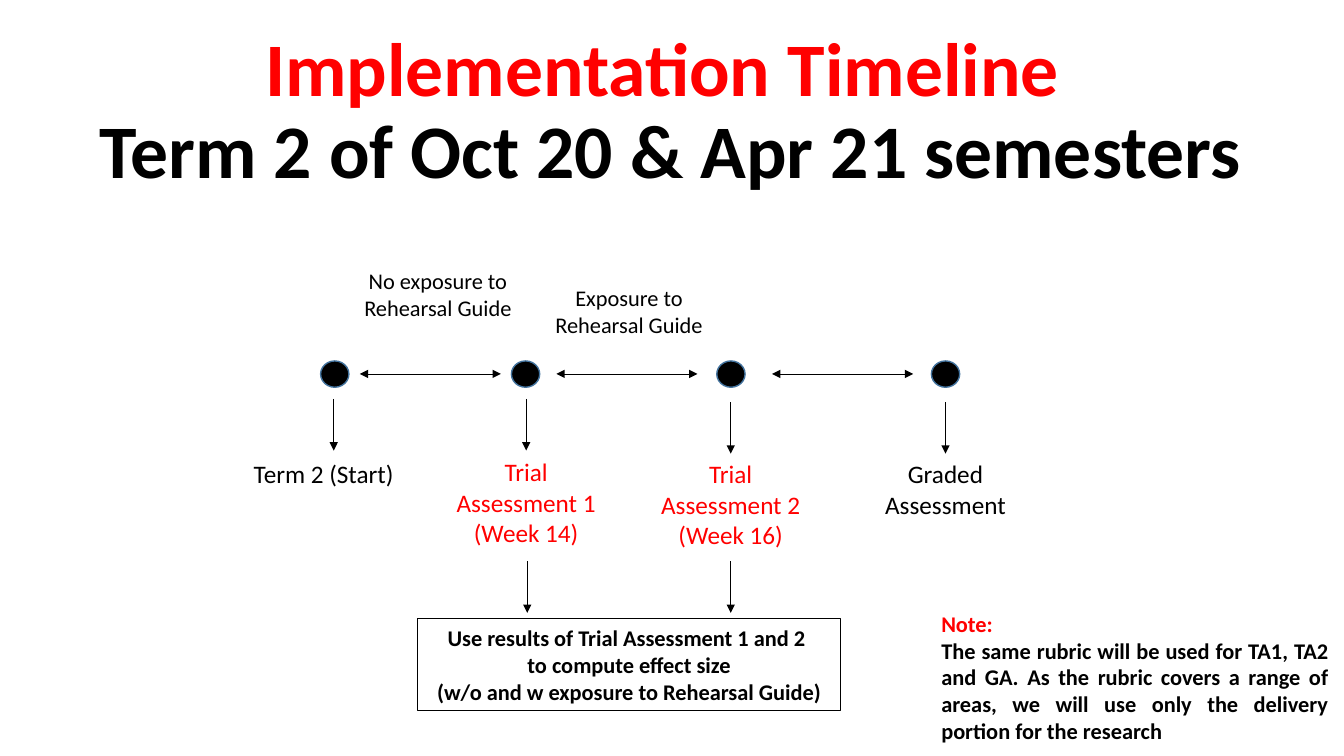
"""Build the implementation timeline slide."""
from dataclasses import dataclass

from lxml import etree
from pptx import Presentation
from pptx.dml.color import RGBColor
from pptx.enum import shapes, text
from pptx.oxml import ns
from pptx.util import Pt

FONT = "Calibri"
BLACK, RED, DOT_EDGE = "000000", "FF0000", "43739E"
CENTER, LEFT, JUSTIFY = text.PP_ALIGN.CENTER, text.PP_ALIGN.LEFT, text.PP_ALIGN.JUSTIFY
DOT_TOP, DOT_W, DOT_H = 257.8, 20.2, 18.8
SPAN_Y, SPAN_LENGTH, DROP_LENGTH = 267.1, 100.8, 36.8
TOOL = "Rehearsal Guide"


@dataclass(frozen=True)
class Line:
    words: str
    color: str = BLACK


@dataclass(frozen=True)
class Label:
    left: float
    top: float
    width: float
    height: float
    lines: tuple[Line, ...]
    size: float = 16
    bold: bool = False
    align: text.PP_ALIGN = CENTER
    boxed: bool = False


@dataclass(frozen=True)
class Arrow:
    x: float
    y: float
    dx: float = 0
    dy: float = 0
    double: bool = False


DOTS = (229, 365.3, 512, 665.3)
SPANS = tuple(Arrow(x, SPAN_Y, dx=SPAN_LENGTH, double=True) for x in (257, 397.4, 551.5))
DROPS = tuple(
    Arrow(x, y, dy=DROP_LENGTH)
    for x, y in ((238.4, 285), (375.9, 285), (522, 287.2), (675.4, 287.2), (376.6, 401), (522, 401))
)
LABELS = (
    Label(174.2, 324, 115.2, 29, (Line("Term 2 (Start)"),), 18, align=LEFT),
    Label(316.1, 322.6, 119.5, 72.7, (Line("Trial Assessment 1", RED), Line("(Week 14)", RED)), 18),
    Label(462.2, 324, 119.5, 72.7, (Line("Trial Assessment 2", RED), Line("(Week 16)", RED)), 18),
    Label(615.6, 324, 119.5, 51, (Line("Graded Assessment"),), 18),
    Label(249.1, 187.2, 127.4, 65.5, (Line(f"No exposure to {TOOL}"),)),
    Label(381.6, 199.4, 135.4, 46, (Line(f"Exposure to {TOOL}"),)),
    Label(
        298.4, 442.1, 302, 65.5,
        (
            Line("Use results of Trial Assessment 1 and 2 "),
            Line("to compute effect size"),
            Line(f"(w/o and w exposure to {TOOL})"),
        ),
        bold=True, boxed=True,
    ),
    Label(
        665.3, 432, 290.9, 104.4,
        (
            Line("Note: ", RED),
            Line(
                "The same rubric will be used for TA1, TA2 and GA. As the rubric covers a range "
                "of areas, we will use only the delivery portion for the research"
            ),
        ),
        bold=True, align=JUSTIFY,
    ),
)


def rgb(value: str) -> RGBColor:
    return RGBColor.from_string(value)


def add_run(p, words: str, size: float, color: str, bold: bool) -> None:
    r = p.add_run()
    r.text = words
    r.font.name, r.font.size, r.font.bold = FONT, Pt(size), bold
    r.font.color.rgb = rgb(color)


def set_title(s) -> None:
    sp = s.shapes.title
    sp.left, sp.top, sp.width, sp.height = Pt(19.4), Pt(6.5), Pt(919.4), Pt(136)
    tf = sp.text_frame
    tf.auto_size = text.MSO_AUTO_SIZE.NONE
    tf.vertical_anchor = text.MSO_ANCHOR.BOTTOM
    p = tf.paragraphs[0]
    p.alignment, p.line_spacing = CENTER, 0.9
    add_run(p, "Implementation Timeline ", 54, RED, True)
    p.add_line_break()
    add_run(p, "Term 2 of Oct 20 & Apr 21 semesters", 54, BLACK, True)


def add_dot(s, left: float) -> None:
    sp = s.shapes.add_shape(shapes.MSO_SHAPE.OVAL, Pt(left), Pt(DOT_TOP), Pt(DOT_W), Pt(DOT_H))
    sp.shadow.inherit = False
    sp.fill.solid()
    sp.fill.fore_color.rgb = rgb(BLACK)
    sp.line.color.rgb = rgb(DOT_EDGE)
    sp.line.width = Pt(1)


def add_arrow(s, arrow: Arrow) -> None:
    sp = s.shapes.add_connector(
        shapes.MSO_CONNECTOR.STRAIGHT,
        Pt(arrow.x), Pt(arrow.y), Pt(arrow.x + arrow.dx), Pt(arrow.y + arrow.dy),
    )
    sp.line.color.rgb = rgb(BLACK)
    sp.line.width = Pt(0.5)
    ln = sp.line._get_or_add_ln()
    for end in ("a:headEnd", "a:tailEnd") if arrow.double else ("a:tailEnd",):
        etree.SubElement(ln, ns.qn(end), type="triangle")
    etree.SubElement(ln.getparent(), ns.qn("a:effectLst"))


def add_label(s, label: Label) -> None:
    sp = s.shapes.add_textbox(Pt(label.left), Pt(label.top), Pt(label.width), Pt(label.height))
    if label.boxed:
        sp.line.color.rgb = rgb(BLACK)
        sp.line.width = Pt(0.75)
    tf = sp.text_frame
    tf.word_wrap = True
    tf.auto_size = text.MSO_AUTO_SIZE.SHAPE_TO_FIT_TEXT
    for i, line in enumerate(label.lines):
        p = tf.add_paragraph() if i else tf.paragraphs[0]
        p.alignment = label.align
        add_run(p, line.words, label.size, line.color, label.bold)


def main() -> None:
    prs = Presentation()
    prs.slide_width, prs.slide_height = Pt(960), Pt(540)
    s = prs.slides.add_slide(prs.slide_layouts[5])
    set_title(s)
    for left in DOTS:
        add_dot(s, left)
    for arrow in SPANS + DROPS:
        add_arrow(s, arrow)
    for label in LABELS:
        add_label(s, label)
    prs.save("out.pptx")


if __name__ == "__main__":
    main()
